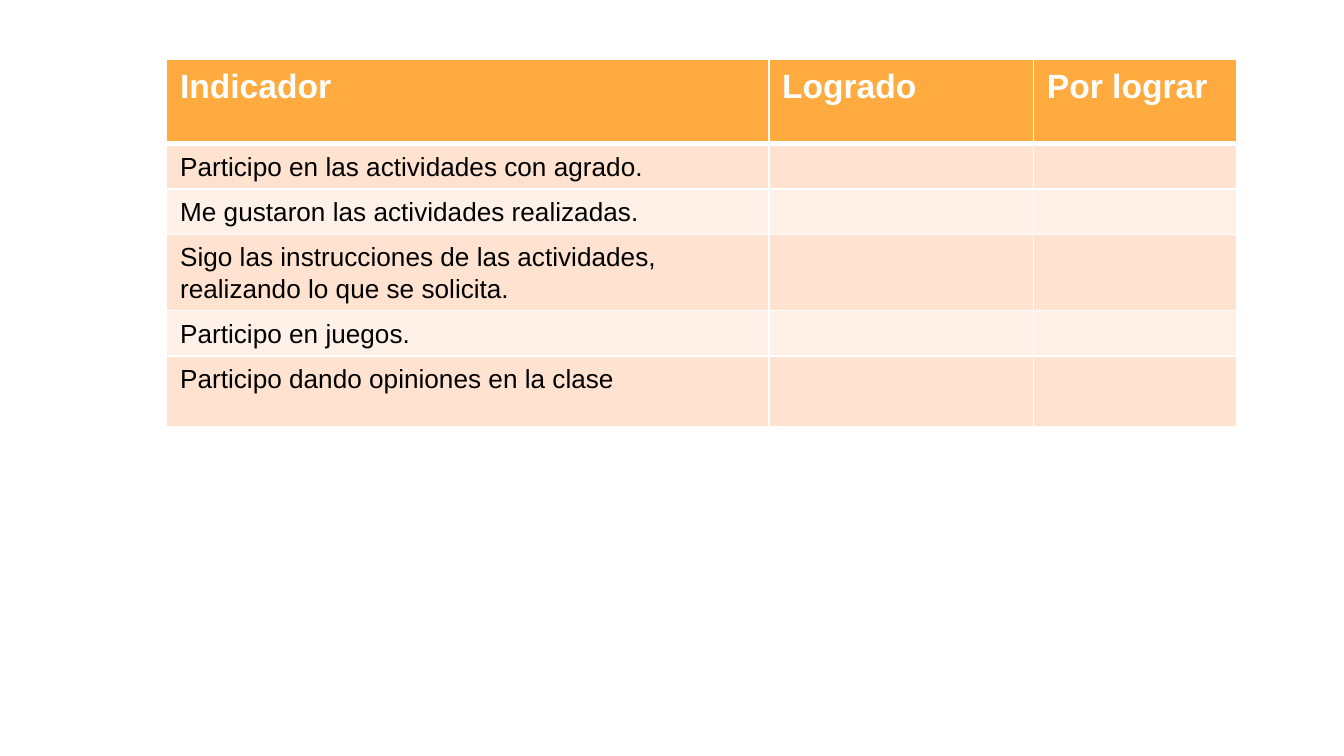
from lxml import etree
from pptx import Presentation
from pptx.dml.color import RGBColor
from pptx.oxml.ns import qn
from pptx.util import Inches, Pt

WHITE = RGBColor(0xFF, 0xFF, 0xFF)
BLACK = RGBColor(0, 0, 0)
ORANGE = RGBColor(0xFF, 0xAB, 0x40)
PEACH = RGBColor(0xFF, 0xE2, 0xCF)
PALE_PEACH = RGBColor(0xFF, 0xF1, 0xE8)
FONT = "Arial"

COLUMN_WIDTHS = [4.48, 1.97, 1.51]
ROW_HEIGHTS = [0.63, 0.33, 0.33, 0.51, 0.3, 0.53]
HEADINGS = ["Indicador", "Logrado", "Por lograr"]
INDICATORS = [
    "Participo en las actividades con agrado.",
    "Me gustaron las actividades realizadas.",
    "Sigo las instrucciones de las actividades, realizando lo que se solicita.",
    "Participo en juegos.",
    "Participo dando opiniones en la clase",
]


def set_borders(cell, widths):
    """Draw white borders whose widths in points are keyed by side."""
    properties = cell._tc.get_or_add_tcPr()
    for position, (side, width) in enumerate(widths.items()):
        line = etree.Element(qn(f"a:ln{side}"), w=str(Pt(width)))
        fill = etree.SubElement(line, qn("a:solidFill"))
        etree.SubElement(fill, qn("a:srgbClr"), val=str(WHITE))
        properties.insert(position, line)


def fill_cell(cell, text, fill, color, size, bold):
    """Write one cell and set its fill and type."""
    cell.fill.solid()
    cell.fill.fore_color.rgb = fill
    para = cell.text_frame.paragraphs[0]
    para.text = text
    para.line_spacing = 1.07
    for span in para.runs:
        span.font.name = FONT
        span.font.size = Pt(size)
        span.font.bold = bold
        span.font.color.rgb = color
    if not text:
        etree.SubElement(para._p, qn("a:endParaRPr"), sz=str(size * 100))


def add_checklist(page, left, top):
    """Place the self-assessment table with its corner at left, top."""
    rows = [HEADINGS] + [[indicator, "", ""] for indicator in INDICATORS]
    frame = page.shapes.add_table(
        len(rows), len(HEADINGS), Inches(left), Inches(top),
        Inches(sum(COLUMN_WIDTHS)), Inches(sum(ROW_HEIGHTS)))
    table = frame.table
    for column, width in zip(table.columns, COLUMN_WIDTHS):
        column.width = Inches(width)
    for index, (row, height, texts) in enumerate(zip(table.rows, ROW_HEIGHTS, rows)):
        row.height = Inches(height)
        for cell, text in zip(row.cells, texts):
            if index == 0:
                fill_cell(cell, text, ORANGE, WHITE, 18, True)
            else:
                band = PEACH if index % 2 else PALE_PEACH
                fill_cell(cell, text, band, BLACK, 14, False)
            set_borders(cell, {"L": 1, "R": 1, "T": 3 if index == 1 else 1,
                               "B": 3 if index == 0 else 1})


def main():
    """Build the deck and save it."""
    deck = Presentation()
    deck.slide_width = Inches(10)
    deck.slide_height = deck.slide_width * 9 // 16
    page = deck.slides.add_slide(deck.slide_layouts[6])
    add_checklist(page, 1.24, 0.44)
    deck.save("out.pptx")


if __name__ == "__main__":
    main()
